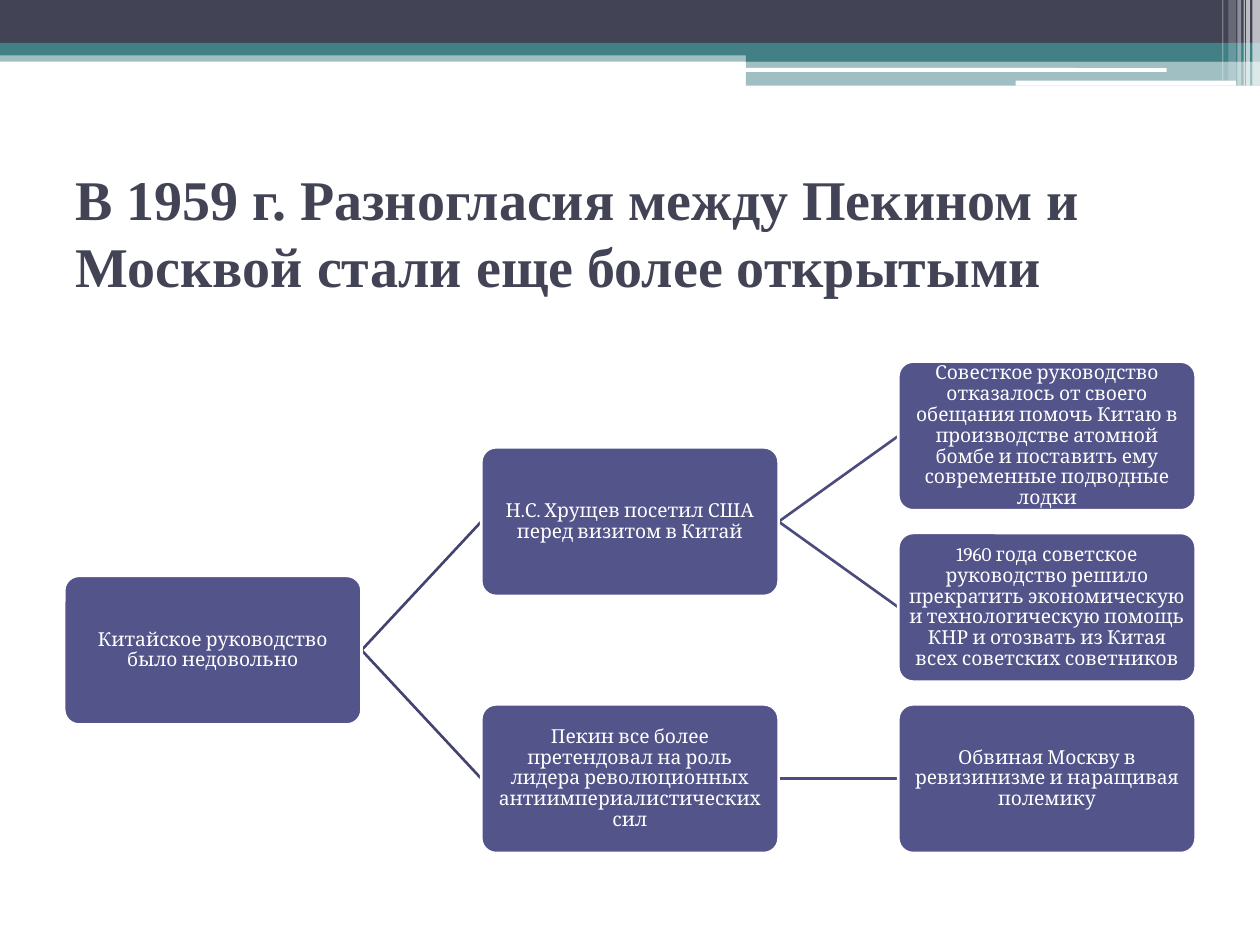
from pptx import Presentation
from pptx.dml.color import RGBColor
from pptx.enum.shapes import MSO_CONNECTOR as Connector, MSO_SHAPE as Shape
from pptx.enum.text import MSO_ANCHOR as Anchor, MSO_AUTO_SIZE as AutoSize, PP_ALIGN as Align
from pptx.oxml.ns import qn
from pptx.util import Inches, Pt
from lxml.etree import SubElement

WHITE = RGBColor(0xFF, 0xFF, 0xFF)
SLATE = RGBColor(0x42, 0x44, 0x56)
TEAL = RGBColor(0x43, 0x80, 0x86)
INDIGO = RGBColor(0x53, 0x54, 0x8A)
FIRST_LINK = RGBColor(0x42, 0x43, 0x6F)
SECOND_LINK = RGBColor(0x4B, 0x4C, 0x7D)

# The slide is a grid of 100 columns by 75 rows.
COLUMNS, ROWS = 100, 75
BOX_WIDTH, BOX_HEIGHT = 23.6, 11.8
TREE_LEFT, TREE_TOP = 5.1, 28.7
LEVEL_STEP, HALF_STEP = 33.1, 6.8

# left, top, width, height, colour, opacity in percent
BANDS = [
    (0, 4, 100, 0.9, TEAL, 50),
    (0, 0, 100, 3.4, SLATE, 100),
    (0, 3.4, 100, 1, TEAL, 100),
    (59.2, 3.9, 40.8, 1, TEAL, 100),
    (59.2, 4.85, 40.8, 1.95, TEAL, 50),
]
WHITE_BARS = [(59.1, 5.4, 33.5, 0.3), (80.6, 6.4, 17.5, 0.4)]
# left, width, height, opacity in percent
STRIPES = [
    (99.4, 0.6, 6.8, 65),
    (98.9, 0.3, 6.8, 65),
    (98.7, 0.1, 6.8, 60),
    (98.2, 0.3, 6.8, 40),
    (97.5, 0.6, 6.4, 20),
    (97, 0.1, 6.4, 30),
]

# name: (level, half steps down, text)
BOXES = {
    "discontent": (0, 2.5, "Китайское руководство было недовольно"),
    "visit": (1, 1, "Н.С. Хрущев посетил США перед визитом в Китай"),
    "refusal": (2, 0, "Совесткое руководство отказалось от своего обещания помочь Китаю "
                      "в производстве атомной бомбе и поставить ему современные подводные лодки"),
    "recall": (2, 2, "1960 года советское руководство решило прекратить экономическую и "
                     "технологическую помощь КНР и отозвать из Китая всех советских советников"),
    "leadership": (1, 4, "Пекин все более претендовал на роль лидера революционных "
                         "антиимпериалистических сил"),
    "polemic": (2, 4, "Обвиная Москву в ревизинизме и наращивая полемику"),
}
LINKS = [
    ("discontent", "visit", FIRST_LINK),
    ("discontent", "leadership", FIRST_LINK),
    ("visit", "refusal", SECOND_LINK),
    ("visit", "recall", SECOND_LINK),
    ("leadership", "polemic", SECOND_LINK),
]


def write_text(shape, text, font="Cambria", size=11, color=WHITE, bold=False,
               align=Align.CENTER, spacing=0.9, inset=0.04):
    frame = shape.text_frame
    frame.word_wrap = True
    frame.auto_size = AutoSize.NONE
    frame.vertical_anchor = Anchor.MIDDLE
    if inset is not None:
        frame.margin_left = frame.margin_right = Inches(inset)
        frame.margin_top = frame.margin_bottom = Inches(inset)
    frame.text = text
    paragraph = frame.paragraphs[0]
    paragraph.alignment = align
    paragraph.line_spacing = spacing
    run_font = paragraph.runs[0].font
    run_font.name, run_font.size, run_font.bold = font, Pt(size), bold
    run_font.color.rgb = color


def box_corner(name):
    level, steps, _ = BOXES[name]
    return TREE_LEFT + level * LEVEL_STEP, TREE_TOP + steps * HALF_STEP


class SlideBuilder:
    def __init__(self, presentation):
        self.cell_width = presentation.slide_width / COLUMNS
        self.cell_height = presentation.slide_height / ROWS
        self.slide = presentation.slides.add_slide(presentation.slide_layouts[5])

    def scale(self, column, row):
        return round(column * self.cell_width), round(row * self.cell_height)

    def title(self, text, left, top, width, height):
        shape = self.slide.shapes.title
        shape.left, shape.top = self.scale(left, top)
        shape.width, shape.height = self.scale(width, height)
        write_text(shape, text, font="Times New Roman", size=32, color=SLATE,
                   bold=True, align=Align.LEFT, spacing=1, inset=None)

    def block(self, left, top, width, height, color, opacity=100, corner=None):
        """Add a plain rectangle, rounded when a corner ratio is given."""
        kind = Shape.RECTANGLE if corner is None else Shape.ROUNDED_RECTANGLE
        shape = self.slide.shapes.add_shape(
            kind, *self.scale(left, top), *self.scale(width, height))
        if corner is not None:
            shape.adjustments[0] = corner
        shape.shadow.inherit = False
        shape.fill.solid()
        shape.fill.fore_color.rgb = color
        shape.line.fill.background()
        if opacity < 100:
            color_element = shape.fill._xPr.find(qn("a:solidFill"))[0]
            SubElement(color_element, qn("a:alpha")).set("val", str(opacity * 1000))
        return shape

    def box(self, name):
        shape = self.block(*box_corner(name), BOX_WIDTH, BOX_HEIGHT, INDIGO, corner=0.1)
        shape.line.color.rgb = WHITE
        shape.line.width = Pt(1.5)
        write_text(shape, BOXES[name][2])

    def link(self, parent, child, color):
        parent_left, parent_top = box_corner(parent)
        child_left, child_top = box_corner(child)
        middle = BOX_HEIGHT / 2
        connector = self.slide.shapes.add_connector(
            Connector.STRAIGHT,
            *self.scale(parent_left + BOX_WIDTH, parent_top + middle),
            *self.scale(child_left, child_top + middle))
        connector.line.color.rgb = color
        connector.line.width = Pt(1.5)
        SubElement(connector._element.spPr, qn("a:effectLst"))


def main():
    presentation = Presentation()
    presentation.slide_width, presentation.slide_height = Inches(10), Inches(7.5)
    builder = SlideBuilder(presentation)

    for band in BANDS:
        builder.block(*band)
    for bar in WHITE_BARS:
        builder.block(*bar, WHITE, corner=0.17)
    for left, width, height, opacity in STRIPES:
        builder.block(left, 0, width, height, WHITE, opacity)

    builder.title("В 1959 г. Разногласия между Пекином и Москвой стали еще более открытыми",
                  5, 12.5, 90, 11.7)
    for link in LINKS:
        builder.link(*link)
    for name in BOXES:
        builder.box(name)

    presentation.save("out.pptx")


if __name__ == "__main__":
    main()
